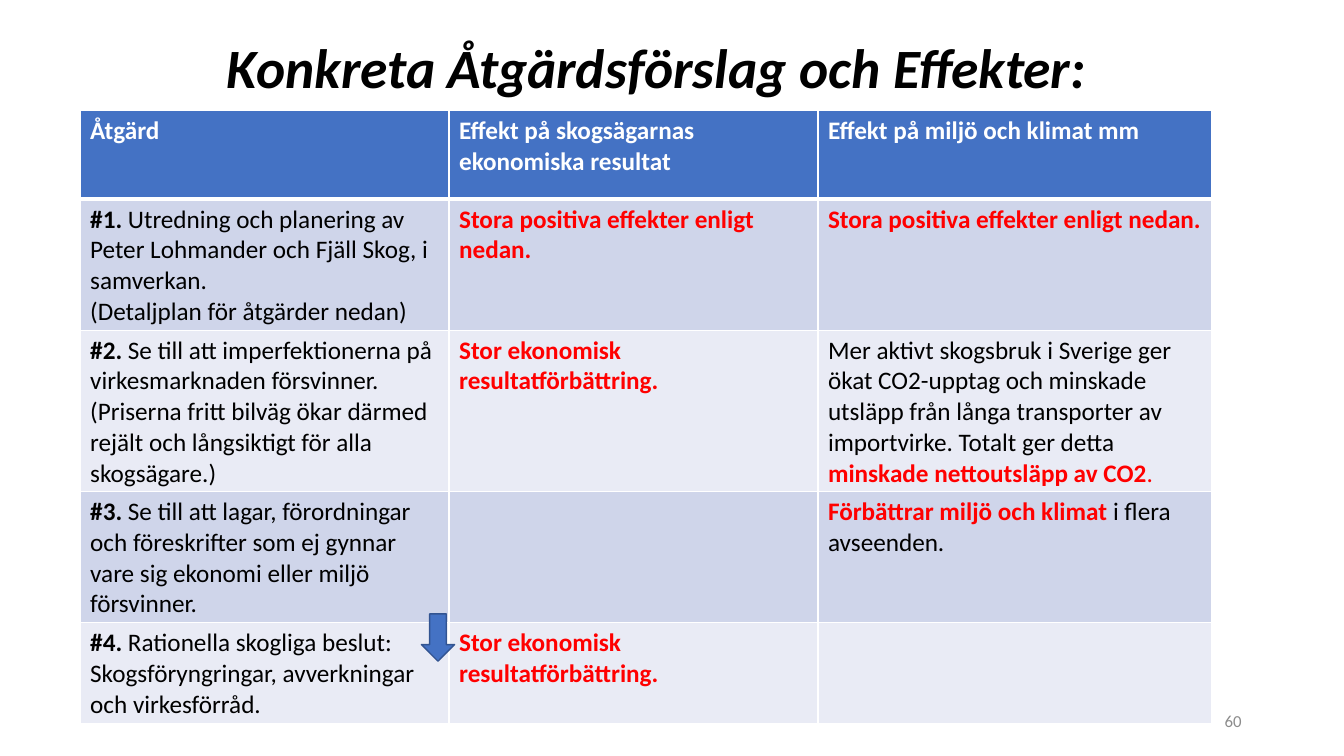
from dataclasses import dataclass

from lxml.etree import SubElement
from pptx import Presentation
from pptx.dml.color import RGBColor
from pptx.enum.shapes import MSO_SHAPE as Preset
from pptx.enum.text import MSO_ANCHOR as Anchor, PP_ALIGN as Align
from pptx.oxml.ns import qn
from pptx.util import Pt

FONT = "Calibri"
COLORS = {
    "black": "000000", "white": "FFFFFF", "red": "FF0000", "gray": "8C8C8C",
    "blue": "4472C4", "outline": "325491", "band_dark": "CFD5EA", "band_light": "E9EBF5",
}


@dataclass(frozen=True)
class Span:
    text: str
    color: str = "black"
    bold: bool = False


@dataclass(frozen=True)
class Area:
    left: float
    top: float
    width: float
    height: float

    def lengths(self) -> tuple:
        return Pt(self.left), Pt(self.top), Pt(self.width), Pt(self.height)


def rgb(name: str) -> RGBColor:
    return RGBColor.from_string(COLORS[name])


def head(text: str) -> Span:
    return Span(text, "white", True)


def strong(text: str) -> Span:
    return Span(text, "black", True)


def effect(text: str) -> Span:
    return Span(text, "red", True)


# Each cell is a list of paragraphs, each paragraph a list of spans
PROFIT = [[effect("Stor ekonomisk resultatförbättring.")]]
BOTH = [[effect("Stora positiva effekter enligt nedan.")]]
ROWS = [
    [
        [[head("Åtgärd")]],
        [[head("Effekt på skogsägarnas ekonomiska resultat")]],
        [[head("Effekt på miljö och klimat mm")]],
    ],
    [
        [
            [strong("#1. "), Span("Utredning och planering av Peter Lohmander och "
                                  "Fjäll Skog, i samverkan.")],
            [Span("(Detaljplan för åtgärder nedan)")],
        ],
        BOTH,
        BOTH,
    ],
    [
        [[strong("#2. "), Span("Se till att imperfektionerna på virkesmarknaden försvinner. "
                               "(Priserna fritt bilväg ökar därmed rejält och långsiktigt "
                               "för alla skogsägare.)")]],
        PROFIT,
        [[Span("Mer aktivt skogsbruk i Sverige ger ökat CO2-upptag och minskade utsläpp "
               "från långa transporter av importvirke. Totalt ger detta "),
          effect("minskade nettoutsläpp av CO2"), Span(".", "red")]],
    ],
    [
        [[strong("#3. "), Span("Se till att lagar, förordningar och föreskrifter som ej "
                               "gynnar vare sig ekonomi eller miljö försvinner.")]],
        [],
        [[effect("Förbättrar miljö och klimat "), Span("i flera avseenden.")]],
    ],
    [
        [[strong("#4. "), Span("Rationella skogliga beslut: Skogsföryngringar, "
                               "avverkningar och virkesförråd.")]],
        PROFIT,
        [],
    ],
]
COLUMN_WIDTHS = (263.52, 263.52, 281.52)
ROW_HEIGHT = 63.36


def write(frame, paragraphs: list, *, size: float, align=Align.LEFT,
          italic: bool = False, spacing: float = 1.0) -> None:
    for index, spans in enumerate(paragraphs):
        para = frame.add_paragraph() if index else frame.paragraphs[0]
        para.alignment = align
        para.line_spacing = spacing
        for span in spans:
            run = para.add_run()
            run.text = span.text
            font = run.font
            font.name, font.size = FONT, Pt(size)
            font.bold, font.italic = span.bold, italic
            font.color.rgb = rgb(span.color)


def add_text(page, area: Area, span: Span, **style) -> None:
    frame = page.shapes.add_textbox(*area.lengths()).text_frame
    frame.word_wrap = True
    frame.vertical_anchor = Anchor.MIDDLE
    write(frame, [[span]], **style)


def set_borders(cell, widths: dict[str, float]) -> None:
    properties = cell._tc.get_or_add_tcPr()
    for side, width in widths.items():
        line = SubElement(properties, qn(f"a:ln{side}"), w=str(Pt(width)))
        fill = SubElement(line, qn("a:solidFill"))
        SubElement(fill, qn("a:srgbClr"), val=COLORS["white"])


def add_measures(page) -> None:
    area = Area(57.24, 78.84, sum(COLUMN_WIDTHS), ROW_HEIGHT * len(ROWS))
    table = page.shapes.add_table(len(ROWS), len(COLUMN_WIDTHS), *area.lengths()).table
    for column, width in zip(table.columns, COLUMN_WIDTHS):
        column.width = Pt(width)
    for row_index, row in enumerate(ROWS):
        table.rows[row_index].height = Pt(ROW_HEIGHT)
        band = "band_dark" if row_index % 2 else "band_light"
        for column_index, paragraphs in enumerate(row):
            cell = table.cell(row_index, column_index)
            # The rule under the header is thicker than the grid
            set_borders(cell, {"L": 1, "R": 1, "T": 3 if row_index == 1 else 1,
                               "B": 3 if row_index == 0 else 1})
            cell.fill.solid()
            cell.fill.fore_color.rgb = rgb(band if row_index else "blue")
            write(cell.text_frame, paragraphs, size=18)


def add_down_arrow(page, area: Area) -> None:
    arrow = page.shapes.add_shape(Preset.DOWN_ARROW, *area.lengths())
    arrow.shadow.inherit = False
    arrow.fill.solid()
    arrow.fill.fore_color.rgb = rgb("blue")
    arrow.line.color.rgb = rgb("outline")
    arrow.line.width = Pt(1)


def main() -> None:
    deck = Presentation()
    deck.slide_width, deck.slide_height = Pt(960), Pt(540)
    page = deck.slides.add_slide(deck.slide_layouts[6])

    # Title and page number
    add_text(page, Area(72, 23.76, 794.16, 53.28),
             strong("Konkreta Åtgärdsförslag och Effekter:"),
             size=39.6, align=Align.CENTER, italic=True, spacing=0.9)
    add_text(page, Area(678, 500.5, 216, 28.75), Span("60", "gray"),
             size=12, align=Align.RIGHT)

    # Table of measures, with the arrow on top
    add_measures(page)
    add_down_arrow(page, Area(301, 438.5, 23.76, 33.84))

    deck.save("out.pptx")


if __name__ == "__main__":
    main()
